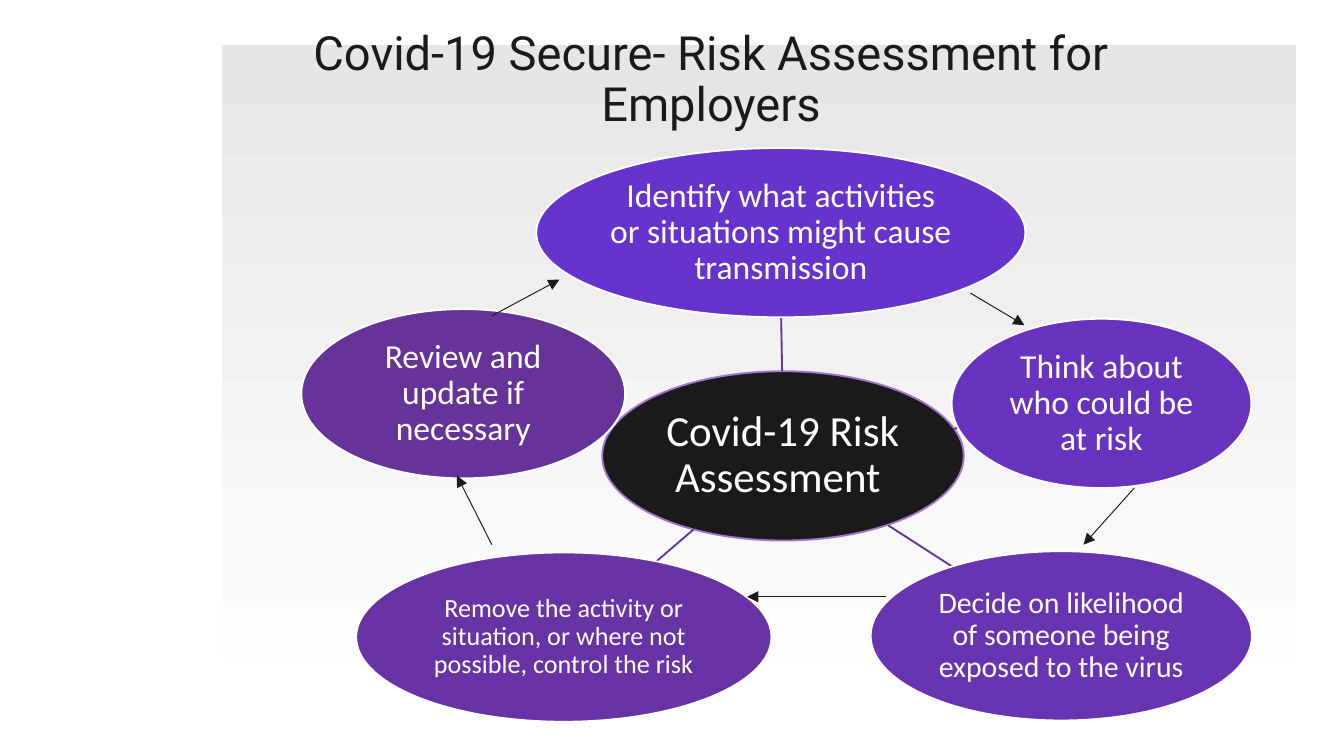
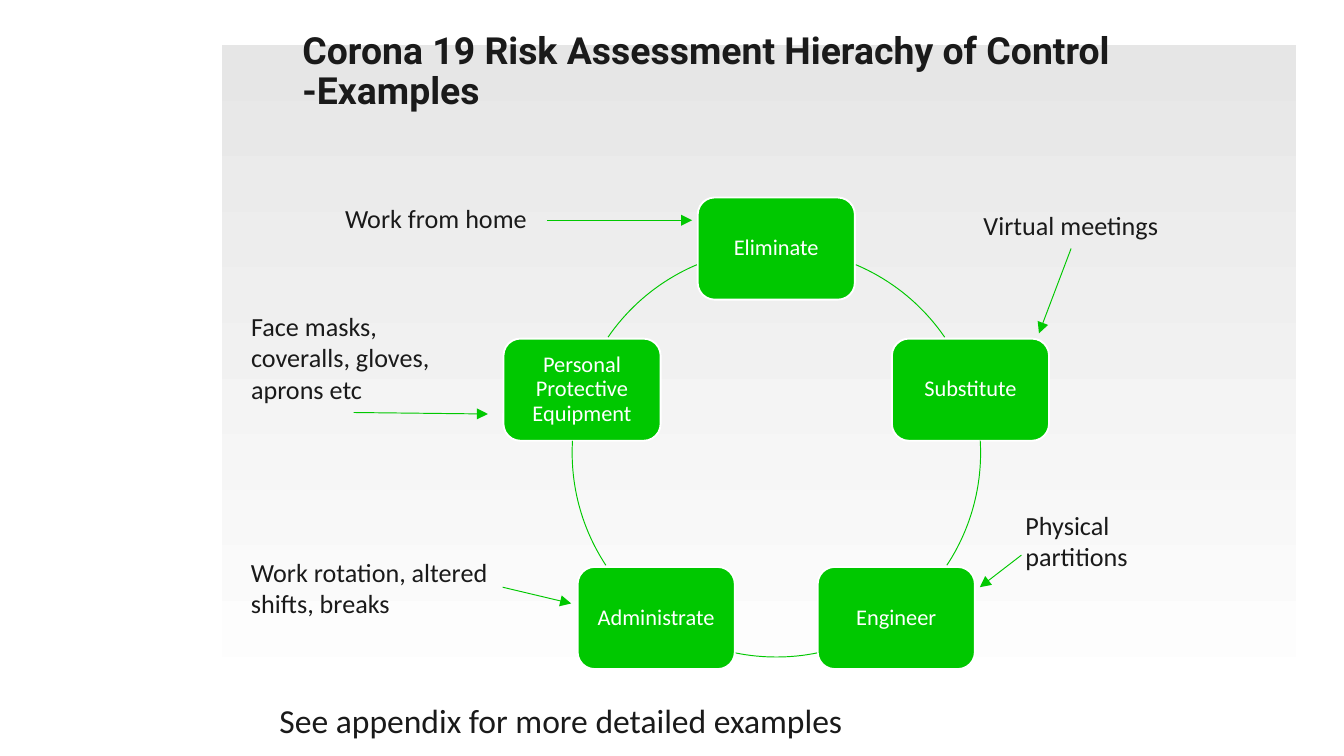
from math import cos, radians, sin

from lxml.etree import SubElement
from pptx import Presentation
from pptx.dml.color import RGBColor
from pptx.enum.shapes import MSO_CONNECTOR, MSO_SHAPE
from pptx.enum.text import MSO_ANCHOR, PP_ALIGN
from pptx.oxml.ns import qn
from pptx.util import Pt

INK = "1A1A1A"
WHITE = "FFFFFF"
PURPLE = "663399"
GREEN = "00C800"


def color(value):
    return RGBColor.from_string(value)


class Board:
    body_font = "Calibri"
    title_font = "Roboto"

    def __init__(self):
        self.deck = Presentation()
        self.deck.slide_width = Pt(720)
        self.deck.slide_height = Pt(405)
        self.page = None

    def add_page(self):
        self.page = self.deck.slides.add_slide(self.deck.slide_layouts[6])
        panel = self.shape(MSO_SHAPE.RECTANGLE, (119, 24.2, 575.3, 357.3))
        panel.fill.gradient()
        panel.fill.gradient_angle = 270
        for stop, shade in zip(panel.fill.gradient_stops, ("E6E6E6", WHITE)):
            stop.color.rgb = color(shade)

    def shape(self, kind, frame, fill=None, line=None, width=1):
        shape = self.page.shapes.add_shape(kind, *map(Pt, frame))
        shape.shadow.inherit = False
        if fill:
            shape.fill.solid()
            shape.fill.fore_color.rgb = color(fill)
        else:
            shape.fill.background()
        if line:
            shape.line.color.rgb = color(line)
            shape.line.width = Pt(width)
        else:
            shape.line.fill.background()
        return shape

    def set_text(self, box, text, size, ink=INK, font=body_font, bold=False,
                 align=PP_ALIGN.LEFT, anchor=MSO_ANCHOR.TOP, inset=None, spacing=None):
        frame = box.text_frame
        frame.word_wrap = True
        frame.vertical_anchor = anchor
        if inset is not None:
            frame.margin_left = frame.margin_right = Pt(inset)
            frame.margin_top = frame.margin_bottom = Pt(inset)
        para = frame.paragraphs[0]
        para.text = text
        para.alignment = align
        para.line_spacing = spacing
        para.font.name = font
        para.font.size = Pt(size)
        para.font.bold = bold
        para.font.color.rgb = color(ink)

    def text_box(self, frame, text, size, **style):
        box = self.page.shapes.add_textbox(*map(Pt, frame))
        self.set_text(box, text, size, **style)

    def title(self, frame, text, size, **style):
        self.text_box(frame, text, size, font=self.title_font,
                      anchor=MSO_ANCHOR.BOTTOM, inset=0, spacing=0.9, **style)

    def node(self, kind, frame, text, size, fill, line=WHITE, inset=1):
        shape = self.shape(kind, frame, fill, line)
        self.set_text(shape, text, size, ink=WHITE, align=PP_ALIGN.CENTER,
                      anchor=MSO_ANCHOR.MIDDLE, inset=inset, spacing=0.9)

    def line(self, ends, ink, width=0.5, arrow=True):
        connector = self.page.shapes.add_connector(MSO_CONNECTOR.STRAIGHT, *map(Pt, ends))
        connector.line.color.rgb = color(ink)
        connector.line.width = Pt(width)
        properties = connector._element.spPr
        if arrow:
            SubElement(properties.find(qn("a:ln")), qn("a:tailEnd"), type="triangle")
        SubElement(properties, qn("a:effectLst"))

    def arc(self, center, radius, start, end, ink):
        x, y = center
        frame = (x - radius, y - radius, 2 * radius, 2 * radius)
        arc = self.shape(MSO_SHAPE.ARC, frame, line=ink, width=0.5)
        arc.adjustments[0] = start % 360 * 0.6
        arc.adjustments[1] = end % 360 * 0.6


def build_assessment(board):
    board.add_page()
    board.node(MSO_SHAPE.OVAL, (322.6, 198.9, 193.7, 90.7),
               "Covid-19 Risk Assessment ", 23, INK, "A375D1")
    spokes = [
        (419, 198.7, 418.5, 170.5),
        (510.5, 229.9, 513.5, 229.1),
        (475.9, 281.5, 510.5, 303.8),
        (371.5, 283.7, 351.4, 301),
    ]
    for ends in spokes:
        board.line(ends, PURPLE, 1, arrow=False)

    steps = [
        (287.3, 79.3, 262.1, "Identify what activities or situations might cause transmission",
         18, "6633CC"),
        (509.8, 170.8, 160.6, "Think about who could be at risk", 18, "6833BF"),
        (466.4, 295.3, 204.3, "Decide on likelihood of someone being exposed to the virus",
         16, "6834B2"),
        (190.8, 296, 222.5,
         "Remove the activity or situation, or where not possible, control the risk",
         14, "6833A5"),
        (161.4, 165.6, 173.5, "Review and update if necessary", 18, PURPLE),
    ]
    for left, top, width, text, size, fill in steps:
        board.node(MSO_SHAPE.OVAL, (left, top, width, 90.7), text, size, fill)

    board.title((126, 46.8, 509.8, 23.8), "Covid-19 Secure- Risk Assessment for Employers",
                25.2, align=PP_ALIGN.CENTER)
    arrows = [
        (519.8, 157, 548.8, 174.2),
        (607.7, 261.4, 580.5, 291.8),
        (263.5, 291.8, 244.8, 254.9),
        (263.5, 169.2, 299.7, 149.8),
        (474.5, 319.7, 400.3, 319.7),
    ]
    for ends in arrows:
        board.line(ends, INK)


def build_hierarchy(board):
    board.add_page()
    center, radius = (415.9, 242.6), 109.4
    width, height = 84.2, 54.7
    controls = ["Eliminate", "Substitute", "Engineer", "Administrate",
                "Personal Protective Equipment"]
    for index, text in enumerate(controls):
        angle = radians(72 * index - 90)
        left = center[0] + radius * cos(angle) - width / 2
        top = center[1] + radius * sin(angle) - height / 2
        board.node(MSO_SHAPE.ROUNDED_RECTANGLE, (left, top, width, height),
                   text, 12, GREEN, inset=3.6)

    arcs = [(-67.1, -34.5), (-3.4, 33.4), (78.5, 101.5), (146.6, 183.4), (214.5, 247.1)]
    for start, end in arcs:
        board.arc(center, radius, start, end, GREEN)

    board.title((162, 10.8, 509.8, 49.7),
                "Corona 19 Risk Assessment Hierachy of Control -Examples", 20, bold=True)
    examples = [
        ((177.8, 105.1, 158.4, 24.5), "Work from home"),
        ((519.8, 108.7, 141.8, 24.5), "Virtual meetings"),
        ((542.2, 269.3, 111.6, 41), "Physical partitions"),
        ((127.4, 294.5, 141.8, 41), "Work rotation, altered shifts, breaks"),
        ((127.4, 162.7, 123.1, 58.3), "Face masks, coveralls, gloves, aprons etc"),
    ]
    for frame, text in examples:
        board.text_box(frame, text, 14)

    arrows = [
        (293, 118, 370.8, 118),
        (573.8, 133.2, 556.6, 178.6),
        (547.2, 297.4, 524.9, 314.6),
        (269.3, 314.6, 306, 323.3),
        (189.4, 221, 261.4, 221.8),
    ]
    for ends in arrows:
        board.line(ends, GREEN)
    board.text_box((142.6, 371.5, 399.6, 28.8), "See appendix for more detailed examples", 18)


def main():
    board = Board()
    build_assessment(board)
    build_hierarchy(board)
    board.deck.save("out.pptx")


if __name__ == "__main__":
    main()
